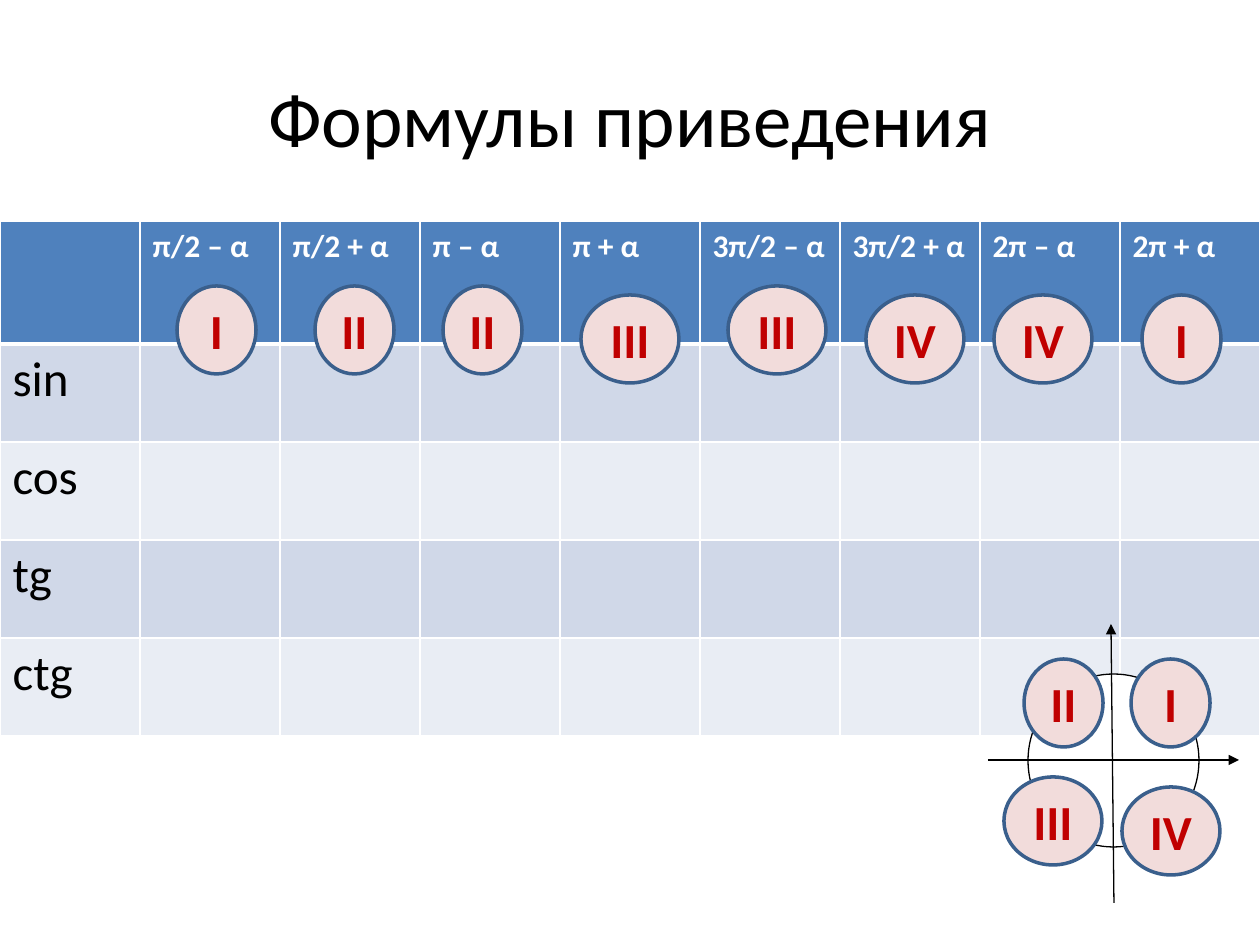
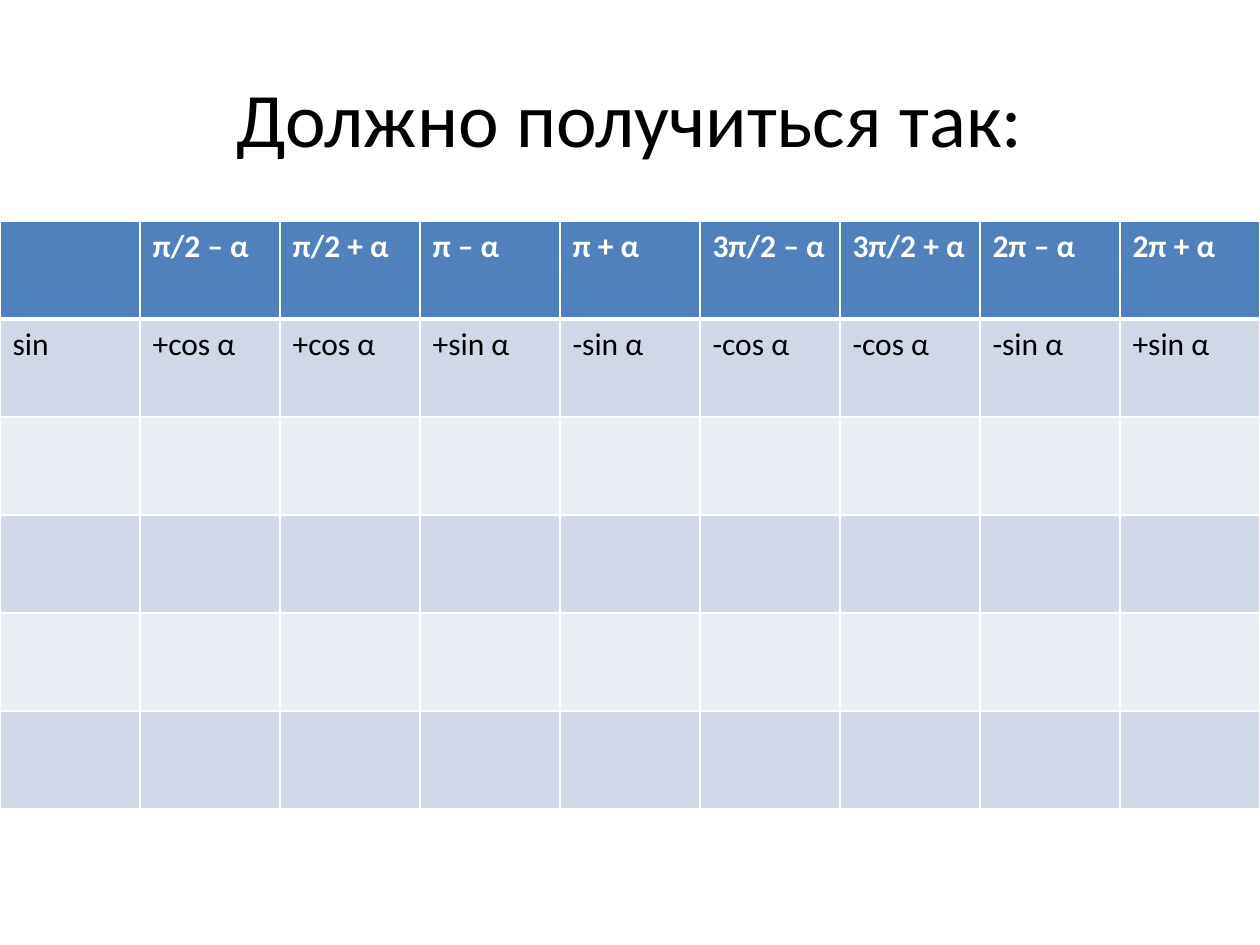
from lxml import etree
from pptx import Presentation
from pptx import util as u
from pptx.dml.color import RGBColor
from pptx.enum import shapes, text
from pptx.oxml import ns

# Colours
BLACK = RGBColor(0x00, 0x00, 0x00)
WHITE = RGBColor(0xFF, 0xFF, 0xFF)
HEADER_BLUE = RGBColor(0x4F, 0x81, 0xBD)
BAND_DARK = RGBColor(0xD0, 0xD8, 0xE8)
BAND_LIGHT = RGBColor(0xE9, 0xED, 0xF4)
BADGE_PINK = RGBColor(0xF2, 0xDC, 0xDB)
BADGE_EDGE = RGBColor(0x3A, 0x5F, 0x8C)
BADGE_RED = RGBColor(0xC0, 0x00, 0x00)

# Shared measures, in px (126 to the inch)
PX_PER_INCH = 126
WIDTH, HEIGHT = 1260, 945
TABLE_TOP, COLUMN_WIDTH, ROW_HEIGHT = 221, 140, 98
BADGE_WIDTHS = {"I": 79, "II": 79, "III": 98, "IV": 98}
BADGE_HEIGHT = 88

ANGLES = ["", "π/2 – α", "π/2 + α", "π – α", "π + α",
          "3π/2 – α", "3π/2 + α", "2π – α", "2π + α"]
SINES = ["sin", "+cos α", "+cos α", "+sin α", "-sin α",
         "-cos α", "-cos α", "-sin α", "+sin α"]


def px(length):
    return u.Emu(round(length * u.Inches(1) / PX_PER_INCH))


class Slides:
    """Holds the style and the current slide."""

    font = "Calibri"

    def __init__(self):
        self.deck = Presentation()
        self.deck.slide_width, self.deck.slide_height = px(WIDTH), px(HEIGHT)
        self.page = None

    def new_page(self, title):
        self.page = self.deck.slides.add_slide(self.deck.slide_layouts[6])
        box = self.page.shapes.add_textbox(px(63), px(38), px(1134), px(157))
        box.text_frame.word_wrap = True
        box.text_frame.vertical_anchor = text.MSO_ANCHOR.MIDDLE
        self.put_text(box.text_frame, title, 44, BLACK, centred=True)

    def put_text(self, frame, words, size, colour, bold=False, centred=False):
        frame.text = words
        para = frame.paragraphs[0]
        if centred:
            para.alignment = text.PP_ALIGN.CENTER
        for span in para.runs:
            span.font.name, span.font.size = self.font, u.Pt(size)
            span.font.bold, span.font.color.rgb = bold, colour

    def border(self, cell, **widths):
        """Give the cell white borders, named by side with widths in points."""
        properties = cell._tc.get_or_add_tcPr()
        for side, width in widths.items():
            line = etree.SubElement(properties, ns.qn("a:ln" + side), w=str(u.Pt(width)))
            fill = etree.SubElement(line, ns.qn("a:solidFill"))
            etree.SubElement(fill, ns.qn("a:srgbClr"), val=str(WHITE))

    def table(self, rows, header_height, body_size):
        heights = [header_height] + [ROW_HEIGHT] * (len(rows) - 1)
        frame = self.page.shapes.add_table(
            len(rows), len(ANGLES), 0, px(TABLE_TOP), px(WIDTH), px(sum(heights)))
        grid = frame.table
        for column in grid.columns:
            column.width = px(COLUMN_WIDTH)
        for i, (row, height) in enumerate(zip(rows, heights)):
            grid.rows[i].height = px(height)
            header = i == 0
            band = HEADER_BLUE if header else BAND_DARK if i % 2 else BAND_LIGHT
            for j, cell in enumerate(grid.rows[i].cells):
                # Borders come before the fill in the cell's XML
                self.border(cell, L=1, R=1, T=3 if i == 1 else 1, B=3 if header else 1)
                cell.fill.solid()
                cell.fill.fore_color.rgb = band
                if j < len(row) and row[j]:
                    self.put_text(cell.text_frame, row[j], 18 if header else body_size,
                                  WHITE if header else BLACK, bold=header)

    def ellipse(self, parent, left, top, width, height, fill, edge, weight):
        shape = parent.shapes.add_shape(
            shapes.MSO_SHAPE.OVAL, px(left), px(top), px(width), px(height))
        shape.shadow.inherit = False
        shape.fill.solid()
        shape.fill.fore_color.rgb = fill
        shape.line.color.rgb, shape.line.width = edge, u.Pt(weight)
        return shape

    def badge(self, quarter, left, top):
        shape = self.ellipse(self.page, left, top, BADGE_WIDTHS[quarter], BADGE_HEIGHT,
                             BADGE_PINK, BADGE_EDGE, 2)
        self.put_text(shape.text_frame, quarter, 28, BADGE_RED, bold=True, centred=True)

    def arrow(self, parent, *ends):
        connector = parent.shapes.add_connector(
            shapes.MSO_CONNECTOR.STRAIGHT, *[px(end) for end in ends])
        connector.line.color.rgb, connector.line.width = BLACK, u.Pt(0.75)
        properties = connector._element.spPr
        etree.SubElement(properties.find(ns.qn("a:ln")), ns.qn("a:tailEnd"), type="triangle")
        etree.SubElement(properties, ns.qn("a:effectLst"))

    def unit_circle(self):
        group = self.page.shapes.add_group_shape()
        self.ellipse(group, 1028, 674, 171, 173, WHITE, BLACK, 0.75)
        self.arrow(group, 988, 760, 1239, 760)
        self.arrow(group, 1114, 903, 1111, 624)


def main():
    slides = Slides()

    # Slide 1: empty table with the quarter of each angle
    slides.new_page("Формулы приведения")
    slides.table([ANGLES, ["sin"], ["cos"], ["tg"], ["ctg"]], 123, 28)
    upper, lower = 286, 295
    for quarter, left, top in [
            ("I", 177, upper), ("II", 315, upper), ("II", 443, upper),
            ("III", 581, lower), ("III", 728, upper), ("IV", 866, lower),
            ("IV", 994, lower), ("I", 1142, lower)]:
        slides.badge(quarter, left, top)

    # Quarters around the unit circle
    slides.unit_circle()
    for quarter, left, top in [
            ("I", 1131, 659), ("II", 1024, 659), ("III", 1004, 777), ("IV", 1122, 787)]:
        slides.badge(quarter, left, top)

    # Slide 2: the answers for the sine
    slides.new_page("Должно получиться так:")
    slides.table([ANGLES, SINES, [], [], [], []], ROW_HEIGHT, 18)

    slides.deck.save("out.pptx")


if __name__ == "__main__":
    main()
